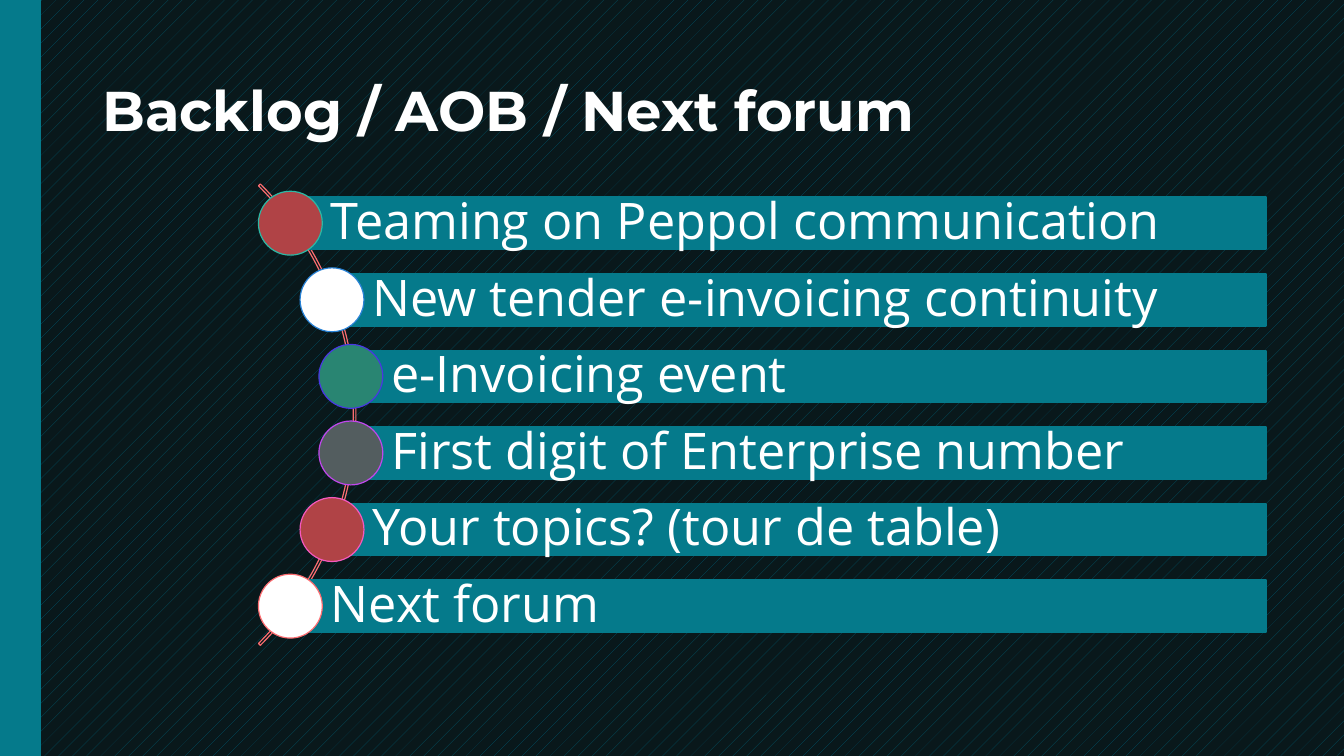
from math import sqrt

from lxml.etree import SubElement
from pptx import Presentation
from pptx.dml.color import RGBColor
from pptx.enum.dml import MSO_PATTERN
from pptx.enum.shapes import MSO_CONNECTOR, MSO_SHAPE
from pptx.enum.text import MSO_ANCHOR, PP_ALIGN
from pptx.oxml.ns import qn
from pptx.util import Cm, Pt

TITLE = "Backlog / AOB / Next forum"
TOPICS = [
    ("Teaming on Peppol communication", "red", "mint"),
    ("New tender e-invoicing continuity", "white", "blue"),
    ("e-Invoicing event", "green", "indigo"),
    ("First digit of Enterprise number", "grey", "violet"),
    ("Your topics? (tour de table)", "red", "pink"),
    ("Next forum", "white", "coral"),
]
COLORS = {
    "night": "09181B", "stripe": "00566B", "teal": "057A8B", "white": "FFFFFF",
    "red": "B04346", "green": "298572", "grey": "535D5F", "mint": "2CB8A5",
    "blue": "2882D6", "indigo": "4937E3", "violet": "C047ED", "pink": "F559BF",
    "coral": "FC6D71",
}
SLIDE_WIDTH, SLIDE_HEIGHT = 33.87, 19.05
ARC_X, ARC_Y, ARC_RADIUS = 0.75, 10.45, 8.22
DOT_ORBIT, DOT_SIZE = 8.15, 1.61
BAR_RIGHT, BAR_HEIGHT, BAR_PITCH = 31.91, 1.3, 1.93


def color(name):
    return RGBColor.from_string(COLORS[name])


def add_figure(slide, preset, left, top, width, height, fill, line, weight):
    figure = slide.shapes.add_shape(preset, Cm(left), Cm(top), Cm(width), Cm(height))
    figure.shadow.inherit = False
    if fill:
        figure.fill.solid()
        figure.fill.fore_color.rgb = color(fill)
    else:
        figure.fill.background()
    figure.line.color.rgb = color(line)
    figure.line.width = Pt(weight)
    return figure


def write(frame, text, font_name, size, bold=False):
    frame.word_wrap = True
    frame.vertical_anchor = MSO_ANCHOR.MIDDLE
    paragraph = frame.paragraphs[0]
    paragraph.text = text
    paragraph.alignment = PP_ALIGN.LEFT
    paragraph.line_spacing = 0.9
    paragraph.font.name = font_name
    paragraph.font.size = Pt(size)
    paragraph.font.bold = bold
    paragraph.font.color.rgb = color("white")


def add_topic(slide, index, text, fill, outline):
    offset = (index - (len(TOPICS) - 1) / 2) * BAR_PITCH
    x = ARC_X + sqrt(DOT_ORBIT ** 2 - offset ** 2)
    y = ARC_Y + offset
    bar = add_figure(slide, MSO_SHAPE.RECTANGLE, x, y - BAR_HEIGHT / 2,
                     BAR_RIGHT - x, BAR_HEIGHT, "teal", "teal", 1.5)
    frame = bar.text_frame
    frame.margin_left = Cm(1.02)
    frame.margin_top = frame.margin_right = frame.margin_bottom = Cm(0.25)
    write(frame, text, "Open Sans", 36)
    add_figure(slide, MSO_SHAPE.OVAL, x - DOT_SIZE / 2, y - DOT_SIZE / 2,
               DOT_SIZE, DOT_SIZE, fill, outline, 0.85)


def main():
    prs = Presentation()
    prs.slide_width, prs.slide_height = Cm(SLIDE_WIDTH), Cm(SLIDE_HEIGHT)
    slide = prs.slides.add_slide(prs.slide_layouts[5])

    backdrop = slide.background.fill
    backdrop.patterned()
    backdrop.pattern = MSO_PATTERN.PERCENT_5
    backdrop.fore_color.rgb = color("stripe")
    backdrop.back_color.rgb = color("night")

    edge = slide.shapes.add_connector(
        MSO_CONNECTOR.STRAIGHT, Cm(0.51), Cm(0), Cm(0.51), Cm(SLIDE_HEIGHT))
    edge.line.color.rgb = color("teal")
    edge.line.width = Pt(30)
    SubElement(edge._element.spPr, qn("a:effectLst"))

    title = slide.shapes.title
    title.left, title.top = Cm(2.33), Cm(1.01)
    title.width, title.height = Cm(29.21), Cm(3.68)
    write(title.text_frame, TITLE, "Montserrat", 40, bold=True)

    arc = add_figure(slide, MSO_SHAPE.BLOCK_ARC, ARC_X - ARC_RADIUS, ARC_Y - ARC_RADIUS,
                     2 * ARC_RADIUS, 2 * ARC_RADIUS, None, "coral", 0.85)
    for position, value in enumerate((189, 27, 0.004)):
        arc.adjustments[position] = value

    for index, topic in enumerate(TOPICS):
        add_topic(slide, index, *topic)

    prs.save("out.pptx")


if __name__ == "__main__":
    main()
